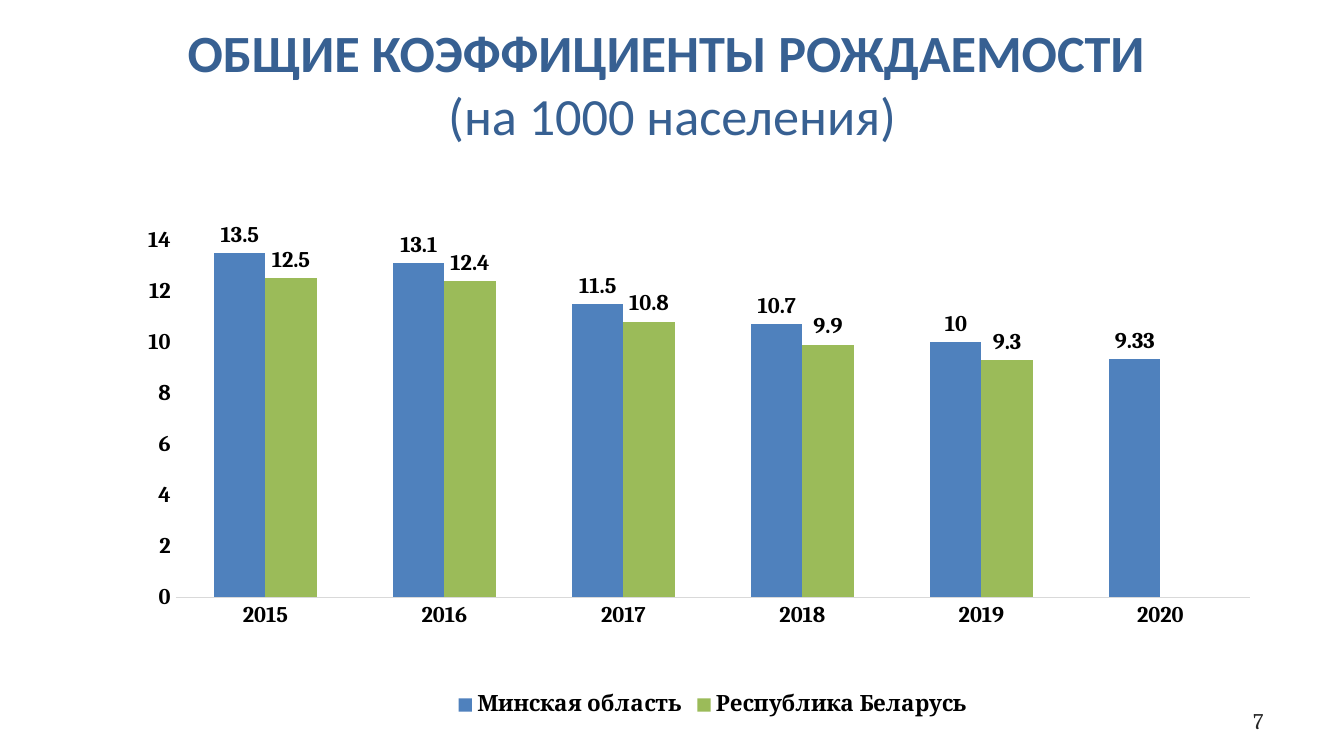
from dataclasses import dataclass

from lxml import etree
from pptx import Presentation
from pptx import util as u
from pptx.chart.data import CategoryChartData
from pptx.dml.color import RGBColor
from pptx.enum import chart as ch
from pptx.enum import text
from pptx.oxml.ns import qn


@dataclass(frozen=True)
class Theme:
    """Colours, fonts and type sizes of the slide."""
    title: str = "376092"
    ink: str = "000000"
    number: str = "262626"
    axis: str = "D9D9D9"
    region: str = "4F81BD"
    country: str = "9BBB59"
    head_font: str = "Calibri"
    body_font: str = "Cambria"
    head_size: int = 28
    body_size: int = 12


THEME = Theme()
SLIDE_WIDTH = 10
SLIDE_HEIGHT = SLIDE_WIDTH * 9 / 16
YEARS = ["2015", "2016", "2017", "2018", "2019", "2020"]
BIRTH_RATES = [
    ("Минская область", [13.5, 13.1, 11.5, 10.7, 10, 9.33], THEME.region),
    ("Республика Беларусь", [12.5, 12.4, 10.8, 9.9, 9.3, None], THEME.country),
]
PLOT = {"x": 0.026, "y": 0.11, "w": 0.948, "h": 0.67}


def style_font(font, size, color, name, bold=False):
    """Set the size, colour, typeface and weight of a font."""
    font.size = u.Pt(size)
    font.color.rgb = RGBColor.from_string(color)
    font.name = name
    font.bold = bold


def add_text(p, content, **style):
    """Append a formatted run to a paragraph."""
    r = p.add_run()
    r.text = content
    style_font(r.font, **style)
    return r


def add_box(s, box, align):
    """Add a middle-anchored text box and return its paragraph."""
    tf = s.shapes.add_textbox(*map(u.Inches, box)).text_frame
    tf.word_wrap = True
    tf.vertical_anchor = text.MSO_ANCHOR.MIDDLE
    p = tf.paragraphs[0]
    p.alignment = align
    return p


def add_title(s, box):
    """Place the two-line heading."""
    p = add_box(s, box, text.PP_ALIGN.CENTER)
    style = dict(size=THEME.head_size, color=THEME.title, name=THEME.head_font)
    add_text(p, "ОБЩИЕ КОЭФФИЦИЕНТЫ РОЖДАЕМОСТИ ", bold=True, **style)
    p.add_line_break()
    add_text(p, "(на 1000 населения)", **style)


def add_page_number(s, box):
    """Place the slide number."""
    p = add_box(s, box, text.PP_ALIGN.RIGHT)
    add_text(p, "7", size=THEME.body_size, color=THEME.number, name=THEME.body_font)


def set_plot_layout(chart):
    """Fix the inner plot area as fractions of the chart."""
    area = chart._chartSpace.find(".//" + qn("c:plotArea"))
    for old in area.findall(qn("c:layout")):
        area.remove(old)
    layout = etree.Element(qn("c:layout"))
    manual = etree.SubElement(layout, qn("c:manualLayout"))
    settings = {"layoutTarget": "inner", "xMode": "edge", "yMode": "edge", **PLOT}
    for tag, value in settings.items():
        etree.SubElement(manual, qn("c:" + tag)).set("val", str(value))
    area.insert(0, layout)


def add_birth_chart(s, box):
    """Place the clustered columns of birth rates by year."""
    data = CategoryChartData()
    data.categories = YEARS
    for name, values, _ in BIRTH_RATES:
        data.add_series(name, values)
    chart = s.shapes.add_chart(
        ch.XL_CHART_TYPE.COLUMN_CLUSTERED, *map(u.Inches, box), data).chart
    style = dict(size=THEME.body_size, color=THEME.ink, name=THEME.body_font, bold=True)
    style_font(chart.font, **style)
    chart.has_title = False
    chart.has_legend = True
    chart.legend.position = ch.XL_LEGEND_POSITION.BOTTOM
    chart.legend.include_in_layout = False
    style_font(chart.legend.font, **style)

    for axis in (chart.category_axis, chart.value_axis):
        axis.has_major_gridlines = False
        axis.major_tick_mark = ch.XL_TICK_MARK.NONE
        axis.minor_tick_mark = ch.XL_TICK_MARK.NONE
        style_font(axis.tick_labels.font, **style)
    line = chart.category_axis.format.line
    line.color.rgb = RGBColor.from_string(THEME.axis)
    line.width = u.Pt(0.75)
    values = chart.value_axis
    values.format.line.fill.background()
    values.minimum_scale, values.maximum_scale, values.major_unit = 0, 15, 2

    plot = chart.plots[0]
    plot.gap_width, plot.overlap = 150, 0
    plot.vary_by_categories = False
    for series, (_, _, color) in zip(plot.series, BIRTH_RATES):
        series.format.fill.solid()
        series.format.fill.fore_color.rgb = RGBColor.from_string(color)
        series.invert_if_negative = False
        labels = series.data_labels
        labels.show_value = True
        labels.position = ch.XL_LABEL_POSITION.OUTSIDE_END
        style_font(labels.font, **style)
    set_plot_layout(chart)


def main():
    """Build and save the slide."""
    prs = Presentation()
    prs.slide_width, prs.slide_height = u.Inches(SLIDE_WIDTH), u.Inches(SLIDE_HEIGHT)
    s = prs.slides.add_slide(prs.slide_layouts[6])
    add_title(s, (0, 0.16, SLIDE_WIDTH, 0.92))
    add_page_number(s, (7.17, 5.21, 2.33, 0.3))
    add_birth_chart(s, (1.09, 1.13, 8.43, 4.25))
    prs.save("out.pptx")


if __name__ == "__main__":
    main()
